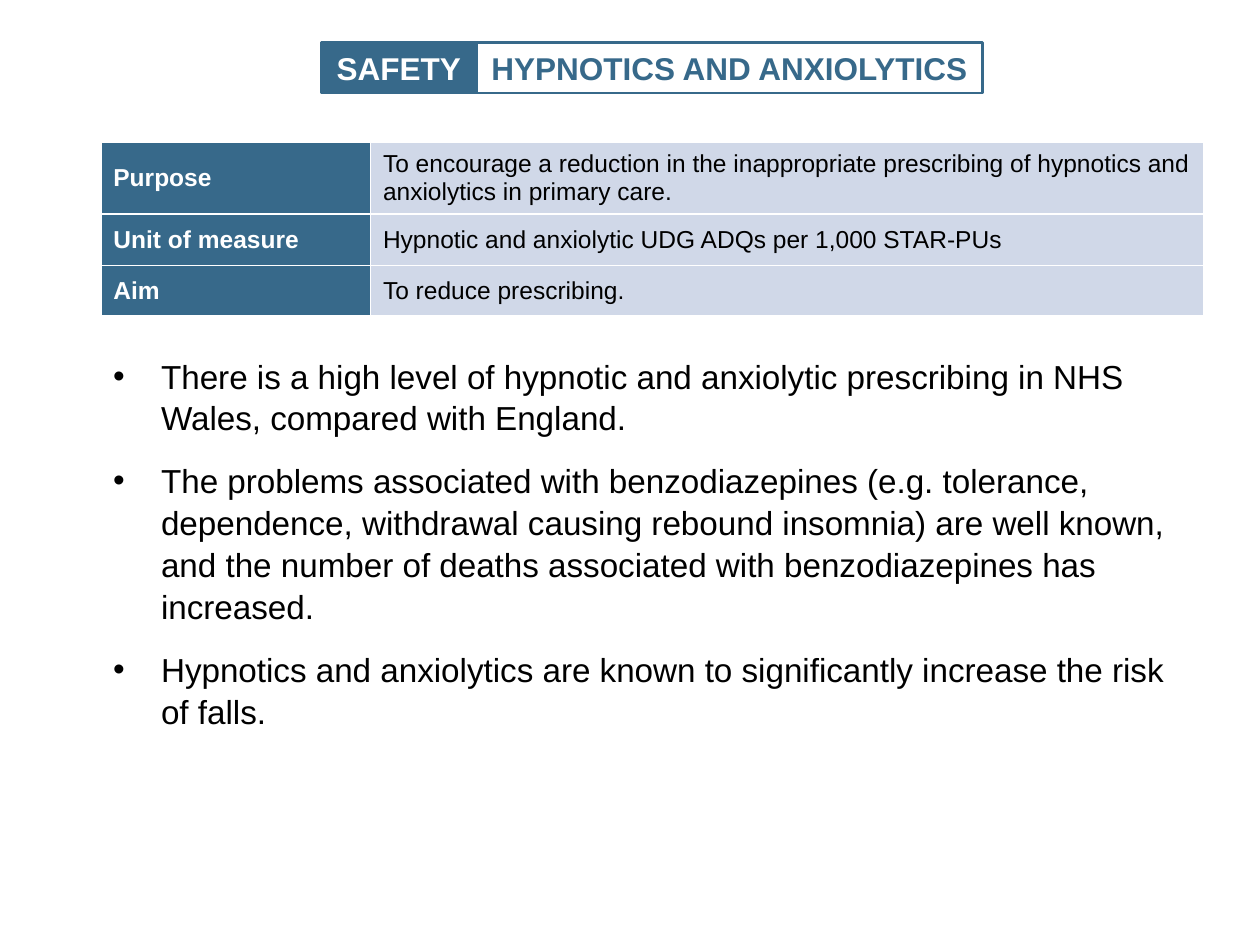
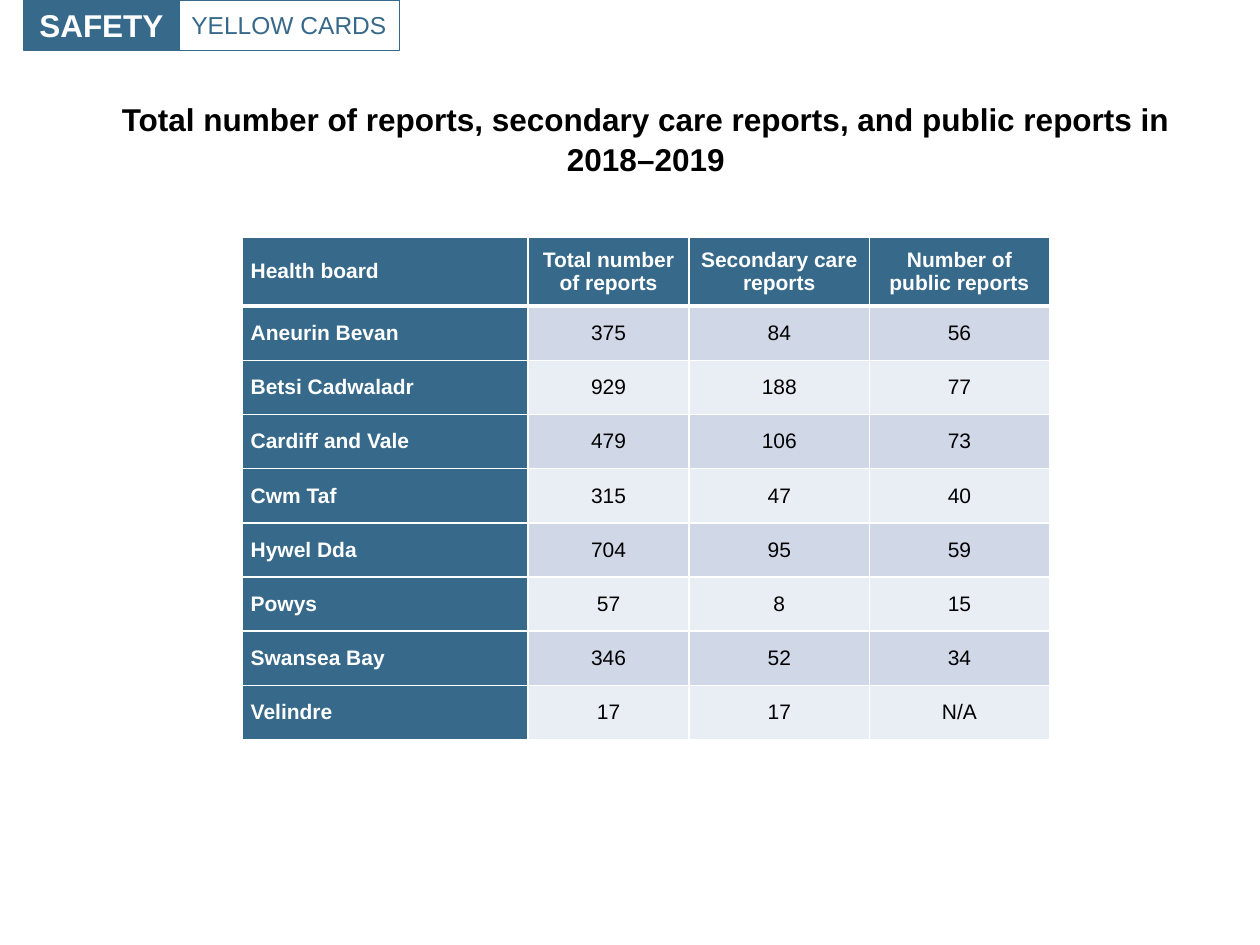
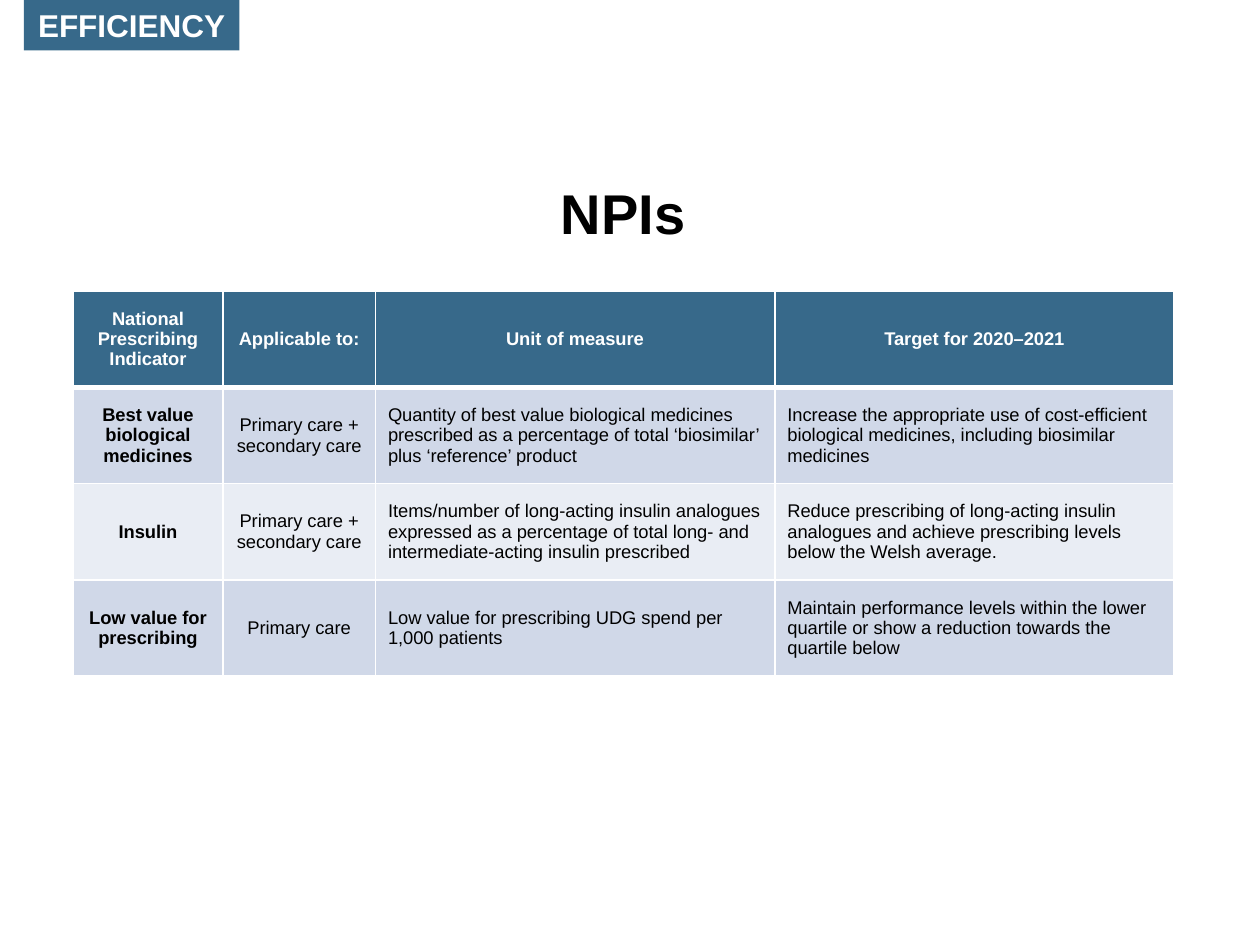
from lxml import etree
from pptx import Presentation
from pptx.dml.color import RGBColor
from pptx.enum.shapes import MSO_SHAPE
from pptx.enum.text import MSO_ANCHOR, PP_ALIGN
from pptx.oxml.ns import qn
from pptx.util import Inches, Pt

RECT = MSO_SHAPE.RECTANGLE
LEFT, CENTER = PP_ALIGN.LEFT, PP_ALIGN.CENTER
TOP, MIDDLE = MSO_ANCHOR.TOP, MSO_ANCHOR.MIDDLE
ALIGN = {"l": LEFT, "c": CENTER}

# Shared look
FONT = "Arial"
BLUE, WHITE, BLACK = "37698A", "FFFFFF", "000000"
BAND, PALE_BAND = "D0D8E8", "E9EDF4"
TAG_HEIGHT = 0.4
LINE_SPACING = 1.05


def rgb(value):
    return RGBColor.from_string(value)


def write(p, text, size, color=BLACK, bold=False, align=LEFT):
    p.alignment = align
    r = p.add_run()
    r.text = text
    for name, value in {"name": FONT, "size": Pt(size), "bold": bold}.items():
        setattr(r.font, name, value)
    r.font.color.rgb = rgb(color)


def add_text_box(slide, left, top, width, height):
    tf = slide.shapes.add_textbox(*map(Inches, (left, top, width, height))).text_frame
    tf.word_wrap = True
    return tf


def add_title(slide, left, top, text, size):
    p = add_text_box(slide, left, top, 8.75, 0.83).paragraphs[0]
    p.line_spacing = LINE_SPACING
    write(p, text, size, bold=True, align=CENTER)


def add_bullets(slide, left, top, width, height, items, size):
    tf = add_text_box(slide, left, top, width, height)
    for i, item in enumerate(items):
        p = tf.paragraphs[0] if i == 0 else tf.add_paragraph()
        p.line_spacing = LINE_SPACING
        if i:
            p.space_before = Pt(12)
        pPr = p._p.get_or_add_pPr()
        pPr.set("marL", str(Inches(0.38)))
        pPr.set("indent", str(-Inches(0.38)))
        etree.SubElement(pPr, qn("a:buFont"), typeface=FONT)
        etree.SubElement(pPr, qn("a:buChar"), char="•")
        write(p, item, size)


def add_tag(slide, left, top, width, text, line=None, filled=True,
            size=18, bold=True, align=CENTER):
    sp = slide.shapes.add_shape(RECT, *map(Inches, (left, top, width, TAG_HEIGHT)))
    sp.shadow.inherit = False
    if filled:
        sp.fill.solid()
        sp.fill.fore_color.rgb = rgb(BLUE)
    else:
        sp.fill.background()
    if line:
        sp.line.color.rgb = rgb(BLUE)
        sp.line.width = Pt(line)
    else:
        sp.line.fill.background()
    tf = sp.text_frame
    tf.word_wrap = True
    tf.vertical_anchor = TOP if filled else MIDDLE
    write(tf.paragraphs[0], text, size, WHITE if filled else BLUE, bold, align)


def set_borders(cell, widths):
    tcPr = cell._tc.get_or_add_tcPr()
    for side, width in widths.items():
        ln = etree.SubElement(tcPr, qn(f"a:ln{side}"), w=str(Pt(width)))
        fill = etree.SubElement(ln, qn("a:solidFill"))
        etree.SubElement(fill, qn("a:srgbClr"), val=WHITE)


def add_table(slide, left, top, cols, heights, rows, size, aligns, margins,
              header_aligns=None, blue_labels=True, bands=(BAND, PALE_BAND)):
    """Table with bold labels in column one and, with header_aligns, a header row."""
    header = header_aligns is not None
    table = slide.shapes.add_table(
        len(rows), len(cols),
        *map(Inches, (left, top, sum(cols), sum(heights)))).table
    table.first_row, table.horz_banding = header, False
    for column, width in zip(table.columns, cols):
        column.width = Inches(width)
    for i, (row, height) in enumerate(zip(rows, heights)):
        table.rows[i].height = Inches(height)
        in_header = header and i == 0
        for j, text in enumerate(row):
            cell = table.cell(i, j)
            blue = in_header or (blue_labels and j == 0)
            set_borders(cell, {"L": 1, "R": 1, "T": 3 if header and i == 1 else 1,
                               "B": 3 if in_header else 1})
            cell.fill.solid()
            cell.fill.fore_color.rgb = rgb(BLUE if blue else bands[(i - header) % len(bands)])
            cell.vertical_anchor = MIDDLE
            cell.margin_left = cell.margin_right = Inches(margins[0])
            cell.margin_top = cell.margin_bottom = Inches(margins[1])
            align = (header_aligns if in_header else aligns)[j]
            write(cell.text_frame.paragraphs[0], text, size,
                  WHITE if blue else BLACK, in_header or j == 0, ALIGN[align])


# Content
PURPOSE_ROWS = [
    ("Purpose", "To encourage a reduction in the inappropriate prescribing of "
                "hypnotics and anxiolytics in primary care."),
    ("Unit of measure", "Hypnotic and anxiolytic UDG ADQs per 1,000 STAR-PUs"),
    ("Aim", "To reduce prescribing."),
]
HYPNOTICS_POINTS = [
    "There is a high level of hypnotic and anxiolytic prescribing in NHS Wales, "
    "compared with England.",
    "The problems associated with benzodiazepines (e.g. tolerance, dependence, "
    "withdrawal causing rebound insomnia) are well known, and the number of deaths "
    "associated with benzodiazepines has increased.",
    "Hypnotics and anxiolytics are known to significantly increase the risk of falls.",
]
REPORT_ROWS = [
    ("Health board", "Total number of reports", "Secondary care reports",
     "Number of public reports"),
    ("Aneurin Bevan", "375", "84", "56"),
    ("Betsi Cadwaladr", "929", "188", "77"),
    ("Cardiff and Vale", "479", "106", "73"),
    ("Cwm Taf", "315", "47", "40"),
    ("Hywel Dda", "704", "95", "59"),
    ("Powys", "57", "8", "15"),
    ("Swansea Bay", "346", "52", "34"),
    ("Velindre", "17", "17", "N/A"),
]
NPI_ROWS = [
    ("National Prescribing Indicator", "Applicable to:", "Unit of measure",
     "Target for 2020–2021"),
    ("Best value biological medicines", "Primary care + secondary care",
     "Quantity of best value biological medicines prescribed as a percentage of total "
     "‘biosimilar’ plus ‘reference’ product",
     "Increase the appropriate use of cost-efficient biological medicines, including "
     "biosimilar medicines"),
    ("Insulin", "Primary care + secondary care",
     "Items/number of long-acting insulin analogues expressed as a percentage of total "
     "long- and intermediate-acting insulin prescribed",
     "Reduce prescribing of long-acting insulin analogues and achieve prescribing "
     "levels below the Welsh average."),
    ("Low value for prescribing", "Primary care",
     "Low value for prescribing UDG spend per 1,000 patients",
     "Maintain performance levels within the lower quartile or show a reduction "
     "towards the quartile below"),
]


def build_hypnotics(slide):
    add_bullets(slide, 0.8, 2.76, 8.75, 3.64, HYPNOTICS_POINTS, 19)
    add_table(slide, 0.8, 1.13, [2.14, 6.61], [0.53, 0.41, 0.4], PURPOSE_ROWS, 14,
              "ll", (0.1, 0.05), bands=(BAND,))
    add_tag(slide, 2.55, 0.34, 1.23, "SAFETY", line=1.5)
    add_tag(slide, 3.78, 0.34, 4.02, "HYPNOTICS AND ANXIOLYTICS", line=1.5, filled=False)


def build_yellow_cards(slide):
    add_title(slide, 0.75, 0.73, "Total number of reports, secondary care reports, "
              "and public reports in 2018–2019", 18)
    add_table(slide, 1.92, 1.88, [2.27, 1.28, 1.43, 1.43], [0.55] + [0.43] * 8,
              REPORT_ROWS, 12, "lccc", (0.07, 0.02), header_aligns="lccc")
    add_tag(slide, 0.19, 0, 1.23, "SAFETY", line=0.75)
    add_tag(slide, 1.42, 0, 1.75, "YELLOW CARDS", line=0.75, filled=False,
            size=14, bold=False, align=LEFT)


def build_npis(slide):
    add_title(slide, 0.57, 1.34, "NPIs", 32)
    add_table(slide, 0.58, 2.31, [1.19, 1.21, 3.17, 3.17], [0.72] * 4, NPI_ROWS, 10.5,
              "ccll", (0.1, 0.12), header_aligns="cccc", blue_labels=False)
    add_tag(slide, 0.19, 0, 1.71, "EFFICIENCY")


def main():
    prs = Presentation()
    prs.slide_width, prs.slide_height = Inches(10), Inches(7.5)
    for build in (build_hypnotics, build_yellow_cards, build_npis):
        build(prs.slides.add_slide(prs.slide_layouts[6]))
    prs.save("out.pptx")


if __name__ == "__main__":
    main()
